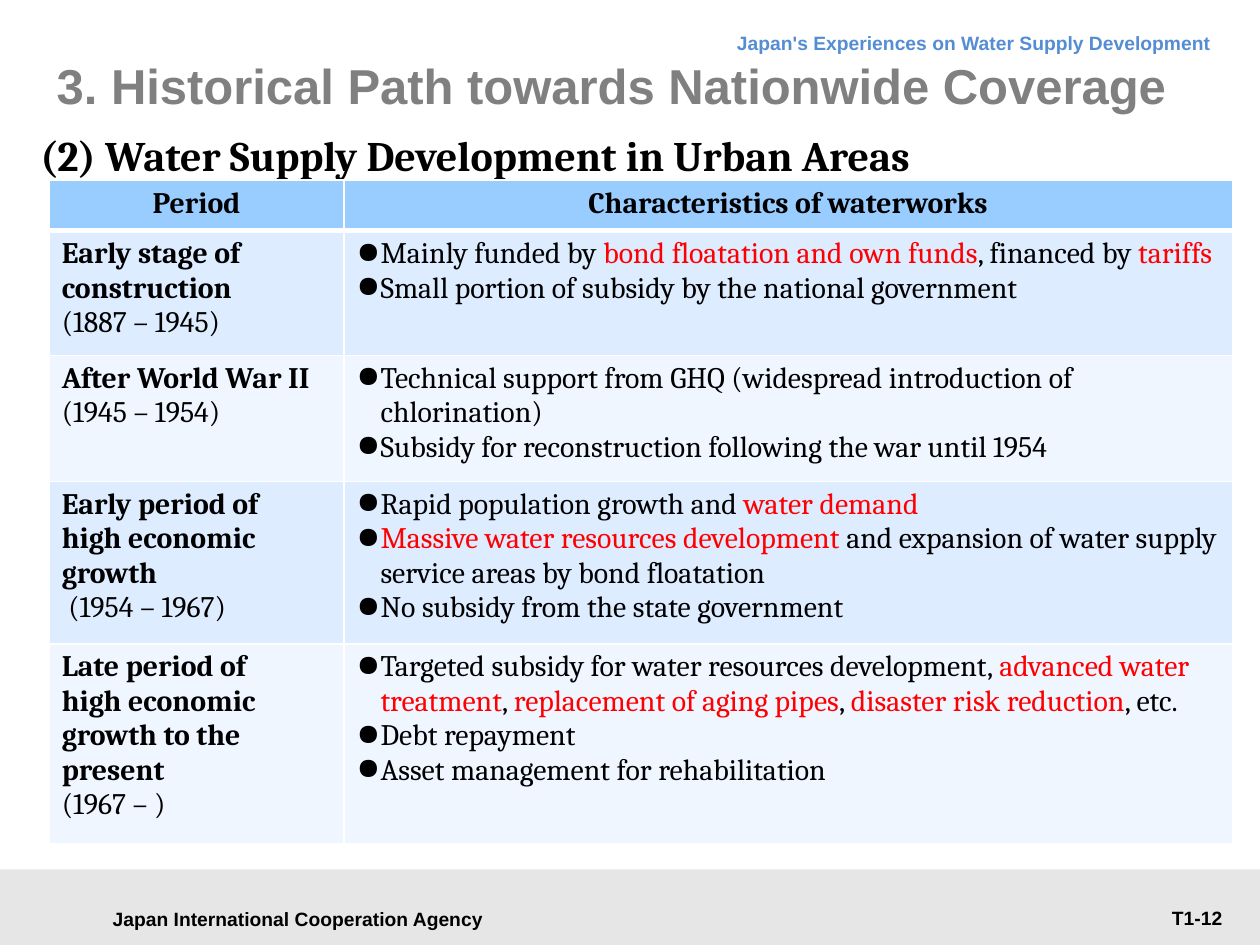
from lxml import etree
from pptx import Presentation
from pptx.dml.color import RGBColor
from pptx.enum.shapes import MSO_SHAPE
from pptx.enum.text import MSO_ANCHOR, MSO_AUTO_SIZE, PP_ALIGN
from pptx.oxml.ns import qn
from pptx.util import Emu, Inches, Pt

LEFT, CENTER, RIGHT = PP_ALIGN.LEFT, PP_ALIGN.CENTER, PP_ALIGN.RIGHT
TOP, MIDDLE = MSO_ANCHOR.TOP, MSO_ANCHOR.MIDDLE
RECTANGLE = MSO_SHAPE.RECTANGLE
NO_AUTOFIT = MSO_AUTO_SIZE.NONE

BLACK = RGBColor(0x00, 0x00, 0x00)
RED = RGBColor(0xFF, 0x00, 0x00)
GRAY = RGBColor(0x80, 0x80, 0x80)
FOOTER_GRAY = RGBColor(0xE6, 0xE6, 0xE6)
COURSE_BLUE = RGBColor(0x54, 0x8D, 0xD4)
HEADER_BLUE = RGBColor(0x99, 0xCC, 0xFF)
BAND_BLUES = (RGBColor(0xDE, 0xEC, 0xFF), RGBColor(0xEF, 0xF6, 0xFF))

TITLE = "3. Historical Path towards Nationwide Coverage"
SUBTITLE = "(2) Water Supply Development in Urban Areas"
COURSE = "Japan's Experiences on Water Supply Development"
AGENCY = "Japan International Cooperation Agency"
PAGE = "T1-12"

HEADERS = ("Period", "Characteristics of waterworks")
# Words between asterisks are emphasised in red.
PERIODS = [
    (["Early stage of construction", "(1887 – 1945)"],
     ["Mainly funded by* bond floatation and own funds*, financed by* tariffs*",
      "Small portion of subsidy by the national government"]),
    (["After World War II", "(1945 – 1954)"],
     ["Technical support from GHQ (widespread introduction of chlorination)",
      "Subsidy for reconstruction following the war until 1954"]),
    (["Early period of", "high economic growth", " (1954 – 1967)"],
     ["Rapid population growth and *water demand*",
      "*Massive water resources development *and expansion of water supply "
      "service areas by bond floatation",
      "No subsidy from the state government"]),
    (["Late period of", "high economic growth to the present", "(1967 – )"],
     ["Targeted subsidy for water resources development, *advanced water "
      "treatment*, *replacement of aging pipes*, *disaster risk reduction*, etc.",
      "Debt repayment",
      "Asset management for rehabilitation"]),
]
COLUMN_WIDTHS = (2.34, 7.05)
ROW_HEIGHTS = (0.4, 0.99, 1, 1.29, 1.59)
BULLET_INDENT = Inches(0.19)


def set_font(paragraph, name, size, color, bold):
    font = paragraph.font
    font.name, font.size, font.bold = name, Pt(size), bold
    font.color.rgb = color


def fill_frame(frame, text, font, align=LEFT, anchor=TOP, margins=None):
    frame.word_wrap = True
    frame.auto_size = NO_AUTOFIT
    frame.vertical_anchor = anchor
    if margins:
        (frame.margin_left, frame.margin_top,
         frame.margin_right, frame.margin_bottom) = map(Inches, margins)
    paragraph = frame.paragraphs[0]
    paragraph.text = text
    paragraph.alignment = align
    set_font(paragraph, *font)
    return paragraph


def add_label(slide, box, *args, **kwargs):
    label = slide.shapes.add_textbox(*map(Inches, box))
    return fill_frame(label.text_frame, *args, **kwargs)


def add_bullet(paragraph):
    properties = paragraph._p.get_or_add_pPr()
    properties.set("marL", str(BULLET_INDENT))
    properties.set("indent", str(-BULLET_INDENT))
    color = etree.SubElement(properties, qn("a:buClr"))
    etree.SubElement(color, qn("a:srgbClr"), val=str(BLACK))
    etree.SubElement(properties, qn("a:buChar"), char="●")


def style_cell(cell, color, top=1, bottom=1):
    properties = cell._tc.get_or_add_tcPr()
    for side, width in (("L", 1), ("R", 1), ("T", top), ("B", bottom)):
        line = etree.SubElement(properties, qn(f"a:ln{side}"), w=str(Pt(width)))
        fill = etree.SubElement(line, qn("a:solidFill"))
        etree.SubElement(fill, qn("a:srgbClr"), val="FFFFFF")
    cell.fill.solid()
    cell.fill.fore_color.rgb = color


def cell_paragraphs(cell, lines):
    frame = cell.text_frame
    for index, line in enumerate(lines):
        yield (frame.add_paragraph() if index else frame.paragraphs[0]), line


def fill_period(cell, lines):
    for paragraph, line in cell_paragraphs(cell, lines):
        paragraph.text = line
        set_font(paragraph, "Cambria", 17, BLACK, line != lines[-1])


def fill_characteristics(cell, lines):
    for paragraph, line in cell_paragraphs(cell, lines):
        add_bullet(paragraph)
        set_font(paragraph, "Cambria", 17, BLACK, False)
        for index, part in enumerate(line.split("*")):
            if part:
                run = paragraph.add_run()
                run.text = part
                if index % 2:
                    run.font.color.rgb = RED


def add_periods_table(slide):
    table = slide.shapes.add_table(
        len(ROW_HEIGHTS), len(COLUMN_WIDTHS), Inches(0.39), Inches(1.43),
        Inches(sum(COLUMN_WIDTHS)), Inches(sum(ROW_HEIGHTS))).table
    for column, width in zip(table.columns, COLUMN_WIDTHS):
        column.width = Inches(width)
    for row, height in zip(table.rows, ROW_HEIGHTS):
        row.height = Inches(height)
    for cell, header in zip(table.rows[0].cells, HEADERS):
        style_cell(cell, HEADER_BLUE, bottom=3)
        paragraph = cell.text_frame.paragraphs[0]
        paragraph.text = header
        paragraph.alignment = CENTER
        set_font(paragraph, "Cambria", 17, BLACK, True)
    for number, (period, characteristics) in enumerate(PERIODS, 1):
        period_cell, characteristics_cell = table.rows[number].cells
        for cell in (period_cell, characteristics_cell):
            style_cell(cell, BAND_BLUES[(number - 1) % 2], top=3 if number == 1 else 1)
        fill_period(period_cell, period)
        fill_characteristics(characteristics_cell, characteristics)


def main():
    deck = Presentation()
    deck.slide_width, deck.slide_height = Inches(10), Inches(7.5)
    slide = deck.slides.add_slide(deck.slide_layouts[5])

    footer_height = Emu(int(deck.slide_height * 0.08))
    footer = slide.shapes.add_shape(
        RECTANGLE, 0, deck.slide_height - footer_height, deck.slide_width, footer_height)
    footer.shadow.inherit = False
    footer.fill.solid()
    footer.fill.fore_color.rgb = FOOTER_GRAY
    footer.line.fill.background()

    small_print = ("Arial", 11, BLACK, True)
    add_label(slide, (0.71, 7.12, 3.31, 0.34), AGENCY, small_print, CENTER, MIDDLE)
    course = add_label(slide, (2.72, 0.13, 6.99, 0.38), COURSE,
                       ("Arial", 11, COURSE_BLUE, True), RIGHT)
    course.line_spacing = Pt(18)
    add_label(slide, (8.23, 7.14, 1.57, 0.29), PAGE, small_print, RIGHT)
    add_label(slide, (0.28, 1.03, 9.45, 0.4), SUBTITLE,
              ("Cambria", 24, BLACK, True), margins=(0.04, 0, 0, 0))
    add_periods_table(slide)

    title = slide.shapes.title
    title.left, title.top, title.width, title.height = map(Inches, (0.39, 0.28, 8.98, 0.79))
    fill_frame(title.text_frame, TITLE, ("Arial", 28, GRAY, True),
               anchor=MIDDLE, margins=(0.06, 0, 0, 0))
    deck.save("out.pptx")


if __name__ == "__main__":
    main()
